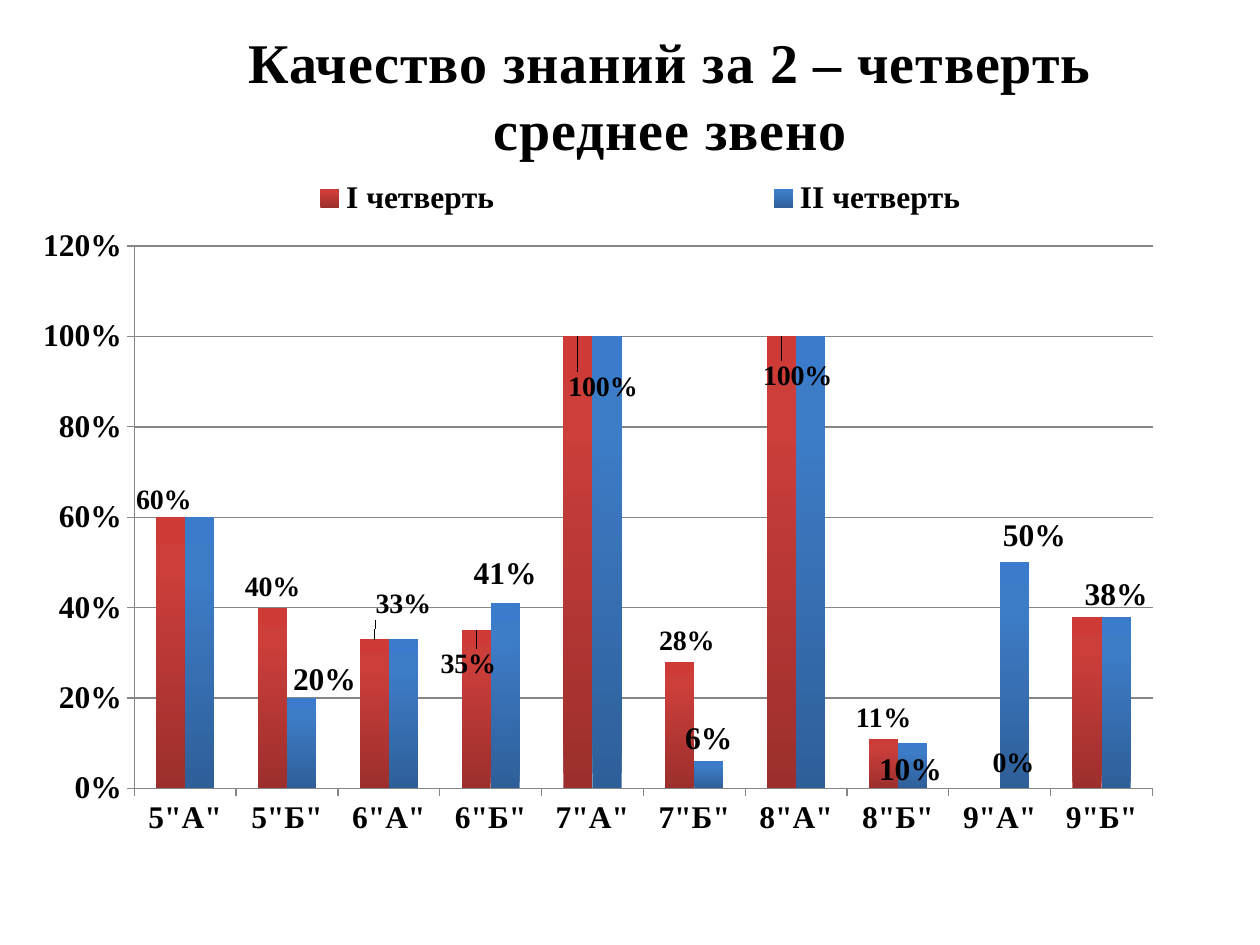
from copy import deepcopy

from lxml import etree
from pptx import Presentation
from pptx.chart.data import CategoryChartData
from pptx.dml.color import RGBColor
from pptx.enum.chart import XL_CHART_TYPE, XL_LABEL_POSITION, XL_LEGEND_POSITION, XL_TICK_MARK
from pptx.enum.text import MSO_ANCHOR, PP_ALIGN
from pptx.oxml.ns import qn
from pptx.util import Emu, Pt

COLUMNS = XL_CHART_TYPE.COLUMN_CLUSTERED
OUTSIDE_END = XL_LABEL_POSITION.OUTSIDE_END
LEGEND_RIGHT = XL_LEGEND_POSITION.RIGHT
TICK_OUTSIDE = XL_TICK_MARK.OUTSIDE
MIDDLE = MSO_ANCHOR.MIDDLE
CENTER = PP_ALIGN.CENTER

PX = 914400 // 126
FONT = "Times New Roman"
BLACK = RGBColor(0x00, 0x00, 0x00)
GRAY = RGBColor(0x86, 0x86, 0x86)
REDS = [RGBColor(0x9C, 0x2F, 0x2D), RGBColor(0xCB, 0x3E, 0x3A), RGBColor(0xCE, 0x3B, 0x37)]
BLUES = [RGBColor(0x2F, 0x5F, 0x99), RGBColor(0x3D, 0x7C, 0xC7), RGBColor(0x3A, 0x7C, 0xCB)]
STOPS = [0, 0.8, 1]

TITLE = "Качество знаний за 2 – четверть\vсреднее звено"
TITLE_BOX = (108, 20, 1125, 149)
CHART_BOX = (39, 168, 1191, 752)
PLOT_LAYOUT = (0.08, 0.104, 0.855, 0.721)
LEGEND_LAYOUT = (0.01, 0.01, 0.99, 0.06)

CLASSES = [f'{grade}"{letter}"' for grade in range(5, 10) for letter in "АБ"]
# Label shifts are in px from the usual place above the column
QUARTERS = [
    {"name": "I четверть", "colors": REDS, "label_size": 16,
     "values": [0.6, 0.4, 0.33, 0.35, 1, 0.28, 1, 0.11, 0, 0.38],
     "shifts": {0: (-7, 4), 2: (29, -14), 3: (-8, 55), 4: (25, 71),
                5: (7, 0), 6: (16, 61), 8: (28, -4)},
     "unlabelled": [9]},
    {"name": "II четверть", "colors": BLUES, "label_size": 18,
     "values": [0.6, 0.2, 0.33, 0.41, 1, 0.06, 1, 0.1, 0.5, 0.38],
     "shifts": {1: (23, 4), 3: (0, -7), 7: (-2, 49), 8: (20, -4)},
     "unlabelled": [0, 2, 4, 6]},
]


def box(pixels):
    return [Emu(value * PX) for value in pixels]


def set_font(font, size):
    font.name = FONT
    font.size = Pt(size)
    font.bold = True
    font.color.rgb = BLACK


def manual_layout(**settings):
    layout = etree.Element(qn("c:layout"))
    manual = etree.SubElement(layout, qn("c:manualLayout"))
    for tag, value in settings.items():
        etree.SubElement(manual, qn(f"c:{tag}"), val=str(value))
    return layout


def edge_layout(x, y, w, h, **target):
    return manual_layout(**target, xMode="edge", yMode="edge", x=x, y=y, w=w, h=h)


def replace_layout(parent, layout, index):
    for old in parent.findall(qn("c:layout")):
        parent.remove(old)
    parent.insert(index, layout)


def fill_gradient(series, colors):
    fill = series.format.fill
    fill.gradient()
    fill.gradient_angle = 90
    stop_list = next(series._element.iter(qn("a:gsLst")))
    stop_list.append(deepcopy(stop_list[-1]))
    for stop, position, color in zip(fill.gradient_stops, STOPS, colors):
        stop.position = position
        stop.color.rgb = color


def label_element(series, index):
    """Return the XML of one point's own label, creating it if needed."""
    series.points[index].data_label.position = OUTSIDE_END
    for element in series._element.iter(qn("c:dLbl")):
        if element.find(qn("c:idx")).get("val") == str(index):
            return element


def add_labels(series, quarter):
    labels = series.data_labels
    labels.show_value = True
    labels.number_format = "0%"
    labels.number_format_is_linked = False
    labels.position = OUTSIDE_END
    set_font(labels.font, quarter["label_size"])
    for index, (shift_x, shift_y) in quarter["shifts"].items():
        set_font(series.points[index].data_label.font, quarter["label_size"])
        x = round(shift_x / CHART_BOX[2], 4)
        y = round(shift_y / CHART_BOX[3], 4)
        replace_layout(label_element(series, index), manual_layout(x=x, y=y), 1)
    for index in quarter["unlabelled"]:
        label = label_element(series, index)
        for child in label[1:]:
            label.remove(child)
        etree.SubElement(label, qn("c:delete"), val="1")


def add_title(slide):
    title = slide.shapes.title
    title.left, title.top, title.width, title.height = box(TITLE_BOX)
    frame = title.text_frame
    frame.text = TITLE
    frame.word_wrap = True
    frame.vertical_anchor = MIDDLE
    paragraph = frame.paragraphs[0]
    paragraph.alignment = CENTER
    set_font(paragraph.font, 32)
    for run in paragraph.runs:
        run.font._element.set("spc", "50")


def add_quality_chart(slide):
    data = CategoryChartData(number_format="0%")
    data.categories = CLASSES
    for quarter in QUARTERS:
        data.add_series(quarter["name"], quarter["values"])
    chart = slide.shapes.add_chart(COLUMNS, *box(CHART_BOX), data).chart
    set_font(chart.font, 18)
    chart.has_title = False

    chart.has_legend = True
    legend = chart.legend
    legend.position = LEGEND_RIGHT
    legend.include_in_layout = False
    set_font(legend.font, 18)
    replace_layout(legend._element, edge_layout(*LEGEND_LAYOUT), 1)
    plot_area = next(chart._chartSpace.iter(qn("c:plotArea")))
    replace_layout(plot_area, edge_layout(*PLOT_LAYOUT, layoutTarget="inner"), 0)

    for axis in (chart.category_axis, chart.value_axis):
        axis.major_tick_mark = TICK_OUTSIDE
        axis.format.line.color.rgb = GRAY
        set_font(axis.tick_labels.font, 18)
    value_axis = chart.value_axis
    value_axis.minimum_scale, value_axis.maximum_scale = 0, 1.2
    value_axis.major_unit = 0.2
    value_axis.major_gridlines.format.line.color.rgb = GRAY
    value_axis.tick_labels.number_format = "0%"
    value_axis.tick_labels.number_format_is_linked = False

    plot = chart.plots[0]
    plot.gap_width = 150
    plot.overlap = 0
    plot.vary_by_categories = False
    for series, quarter in zip(plot.series, QUARTERS):
        fill_gradient(series, quarter["colors"])
        add_labels(series, quarter)


def main():
    presentation = Presentation()
    presentation.slide_width, presentation.slide_height = box((1260, 945))
    slide = presentation.slides.add_slide(presentation.slide_layouts[5])
    add_quality_chart(slide)
    add_title(slide)
    presentation.save("out.pptx")


if __name__ == "__main__":
    main()
